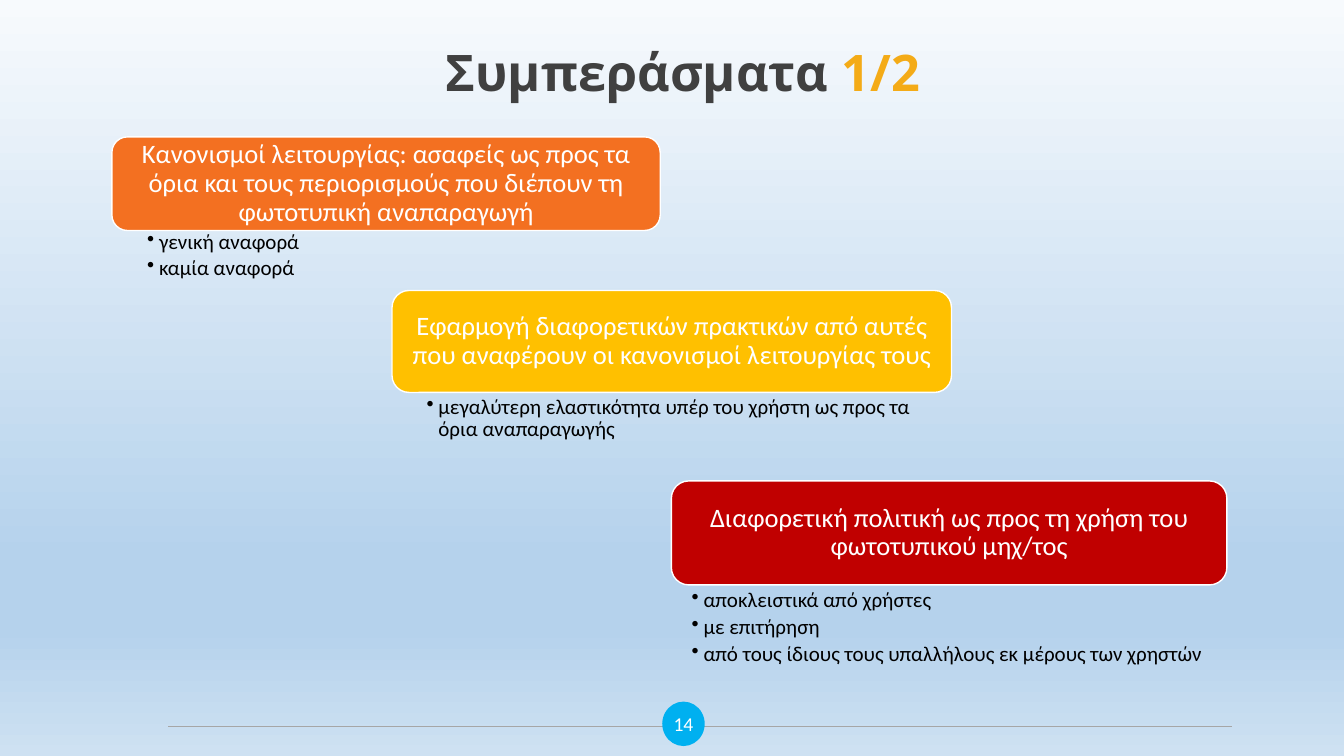
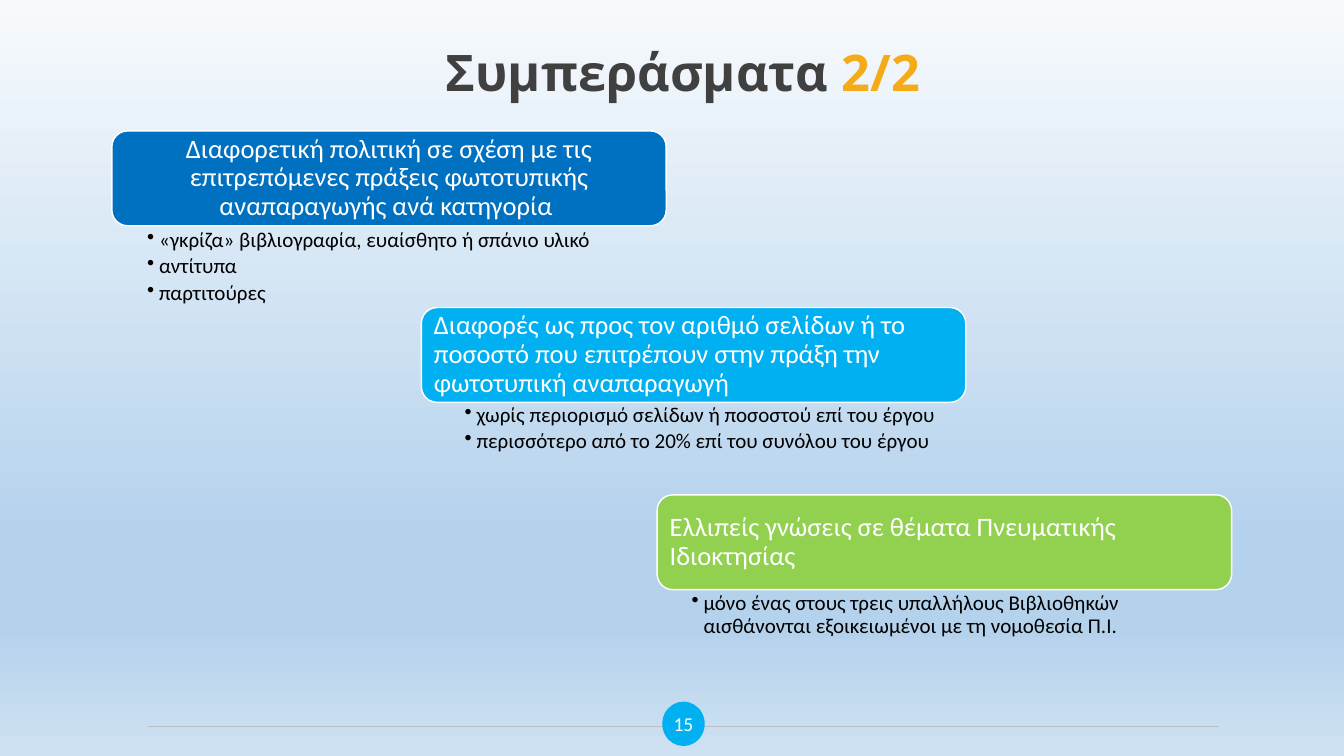
"""Build two conclusion slides with stepped cards, each followed by bullet points."""
from lxml import etree
from pptx import Presentation
from pptx.dml.color import RGBColor
from pptx.enum.shapes import MSO_CONNECTOR, MSO_SHAPE
from pptx.enum.text import MSO_ANCHOR, PP_ALIGN
from pptx.oxml.ns import qn
from pptx.util import Cm, Pt

CENTER, LEFT = PP_ALIGN.CENTER, PP_ALIGN.LEFT
TOP, MIDDLE = MSO_ANCHOR.TOP, MSO_ANCHOR.MIDDLE
ROUNDED, OVAL = MSO_SHAPE.ROUNDED_RECTANGLE, MSO_SHAPE.OVAL
STRAIGHT = MSO_CONNECTOR.STRAIGHT

COLORS = {
    "sky_top": "F7FAFD", "sky_mid": "B5D2EC", "sky_end": "CEE1F2",
    "title": "404040", "part": "F4AB17", "white": "FFFFFF", "black": "000000",
    "orange": "F37021", "yellow": "FFC000", "red": "C00000",
    "blue": "0070C0", "cyan": "00B0F0", "green": "92D050",
    "rule_dark": "A6A6A6", "rule_light": "BFBFBF",
}
TITLE_FONT, BODY_FONT = "Open Sans", "Calibri"
BULLET_INDENT = Cm(0.3)

SLIDES = [
    {
        "part": "1/2", "number": "14", "sky_stop": 74,
        "rule": (4.24, 31.04, "rule_dark"),
        "cards": [
            ((2.82, 3.45, 13.82, 2.36), "orange", CENTER,
             "Κανονισμοί λειτουργίας: ασαφείς ως προς τα όρια και τους "
             "περιορισμούς που διέπουν τη φωτοτυπική αναπαραγωγή",
             (2.82, 5.77, 12.47, 1.68),
             ["γενική αναφορά", "καμία αναφορά"]),
            ((9.88, 7.32, 14.1, 2.57), "yellow", CENTER,
             "Εφαρμογή διαφορετικών πρακτικών από αυτές που αναφέρουν οι "
             "κανονισμοί λειτουργίας τους",
             (9.86, 9.93, 13.64, 2.18),
             ["μεγαλύτερη ελαστικότητα υπέρ του χρήστη ως προς τα όρια αναπαραγωγής"]),
            ((16.92, 12.12, 14, 2.62), "red", CENTER,
             "Διαφορετική πολιτική ως προς τη χρήση του φωτοτυπικού μηχ/τος",
             (16.54, 14.81, 14.5, 2.16),
             ["αποκλειστικά από χρήστες", "με επιτήρηση",
              "από τους ίδιους τους υπαλλήλους εκ μέρους των χρηστών"]),
        ],
    },
    {
        "part": "2/2", "number": "15", "sky_stop": 71,
        "rule": (3.73, 30.73, "rule_light"),
        "cards": [
            ((2.82, 3.3, 13.97, 2.39), "blue", CENTER,
             "Διαφορετική πολιτική σε σχέση με τις επιτρεπόμενες πράξεις "
             "φωτοτυπικής αναπαραγωγής ανά κατηγορία ",
             (2.82, 5.72, 13.06, 2.11),
             ["«γκρίζα» βιβλιογραφία, ευαίσθητο ή σπάνιο υλικό", "αντίτυπα",
              "παρτιτούρες"]),
            ((10.62, 7.75, 13.72, 2.39), "cyan", LEFT,
             "Διαφορές ως προς τον αριθμό σελίδων ή το ποσοστό που επιτρέπουν "
             "στην πράξη την φωτοτυπική αναπαραγωγή",
             (10.82, 10.13, 13.31, 2.11),
             ["χωρίς περιορισμό σελίδων ή ποσοστού επί του έργου",
              "περισσότερο από το 20% επί του συνόλου του έργου"]),
            ((16.56, 12.47, 14.48, 2.39), "green", LEFT,
             "Ελλιπείς γνώσεις σε θέματα Πνευματικής Ιδιοκτησίας",
             (16.54, 14.88, 13.36, 2.11),
             ["μόνο ένας στους τρεις υπαλλήλους Βιβλιοθηκών αισθάνονται "
              "εξοικειωμένοι με τη νομοθεσία Π.Ι."]),
        ],
    },
]


def add_span(para, text, size, color, font=BODY_FONT, bold=False):
    """Append one formatted run to a paragraph."""
    span = para.add_run()
    span.text = text
    span.font.name, span.font.size, span.font.bold = font, Pt(size), bold
    span.font.color.rgb = RGBColor.from_string(COLORS[color])


def set_frame(shape, anchor, margins):
    """Prepare the text frame of a shape and return it."""
    frame = shape.text_frame
    frame.word_wrap = True
    frame.vertical_anchor = anchor
    (frame.margin_left, frame.margin_top,
     frame.margin_right, frame.margin_bottom) = map(Cm, margins)
    return frame


deck = Presentation()
deck.slide_width, deck.slide_height = Cm(33.87), Cm(19.05)

for content in SLIDES:
    page = deck.slides.add_slide(deck.slide_layouts[5])

    sky = page.background.fill
    sky.gradient()
    sky.gradient_angle = 270
    stops = page.element.find(".//" + qn("a:gsLst"))
    for stop in list(stops):
        stops.remove(stop)
    for position, color in ((0, "sky_top"), (content["sky_stop"], "sky_mid"),
                            (83, "sky_mid"), (100, "sky_end")):
        stop = etree.SubElement(stops, qn("a:gs"), pos=str(position * 1000))
        etree.SubElement(stop, qn("a:srgbClr"), val=COLORS[color])

    title = page.shapes.title
    title.left, title.top, title.width, title.height = map(Cm, (3.1, 0.81, 28.22, 2.18))
    para = set_frame(title, MIDDLE, (0.25, 0.13, 0.25, 0.13)).paragraphs[0]
    para.alignment, para.line_spacing = CENTER, 0.9
    add_span(para, "Συμπεράσματα ", 36, "title", TITLE_FONT, True)
    add_span(para, content["part"], 36, "part", TITLE_FONT, True)

    start, end, color = content["rule"]
    rule = page.shapes.add_connector(STRAIGHT, Cm(start), Cm(18.31), Cm(end), Cm(18.31))
    rule.line.color.rgb = RGBColor.from_string(COLORS[color])
    rule.line.width = Pt(0.5)
    etree.SubElement(rule.element.spPr, qn("a:effectLst"))

    for card_area, fill, alignment, heading, list_area, points in content["cards"]:
        card = page.shapes.add_shape(ROUNDED, *map(Cm, card_area))
        card.shadow.inherit = False
        card.fill.solid()
        card.fill.fore_color.rgb = RGBColor.from_string(COLORS[fill])
        card.line.color.rgb = RGBColor.from_string(COLORS["white"])
        card.line.width = Pt(1)
        para = set_frame(card, MIDDLE, (0.2, 0.2, 0.2, 0.2)).paragraphs[0]
        para.alignment, para.line_spacing = alignment, 0.9
        add_span(para, heading, 19, "white")

        box = page.shapes.add_textbox(*map(Cm, list_area))
        frame = set_frame(box, TOP, (0.89, 0.05, 0.3, 0.05))
        for index, point in enumerate(points):
            para = frame.add_paragraph() if index else frame.paragraphs[0]
            properties = para._p.get_or_add_pPr()
            properties.set("marL", str(BULLET_INDENT))
            properties.set("indent", str(-BULLET_INDENT))
            etree.SubElement(properties, qn("a:buChar"), char="•")
            para.level, para.line_spacing, para.space_after = 1, 0.9, Pt(3)
            add_span(para, point, 15, "black")

    badge = page.shapes.add_shape(OVAL, Cm(16.69), Cm(17.68), Cm(1.07), Cm(1.12))
    badge.shadow.inherit = False
    badge.fill.solid()
    badge.fill.fore_color.rgb = RGBColor.from_string(COLORS["cyan"])
    badge.line.fill.background()
    para = set_frame(badge, MIDDLE, (0, 0.13, 0, 0.13)).paragraphs[0]
    para.alignment = CENTER
    add_span(para, content["number"], 14, "white")

deck.save("out.pptx")
